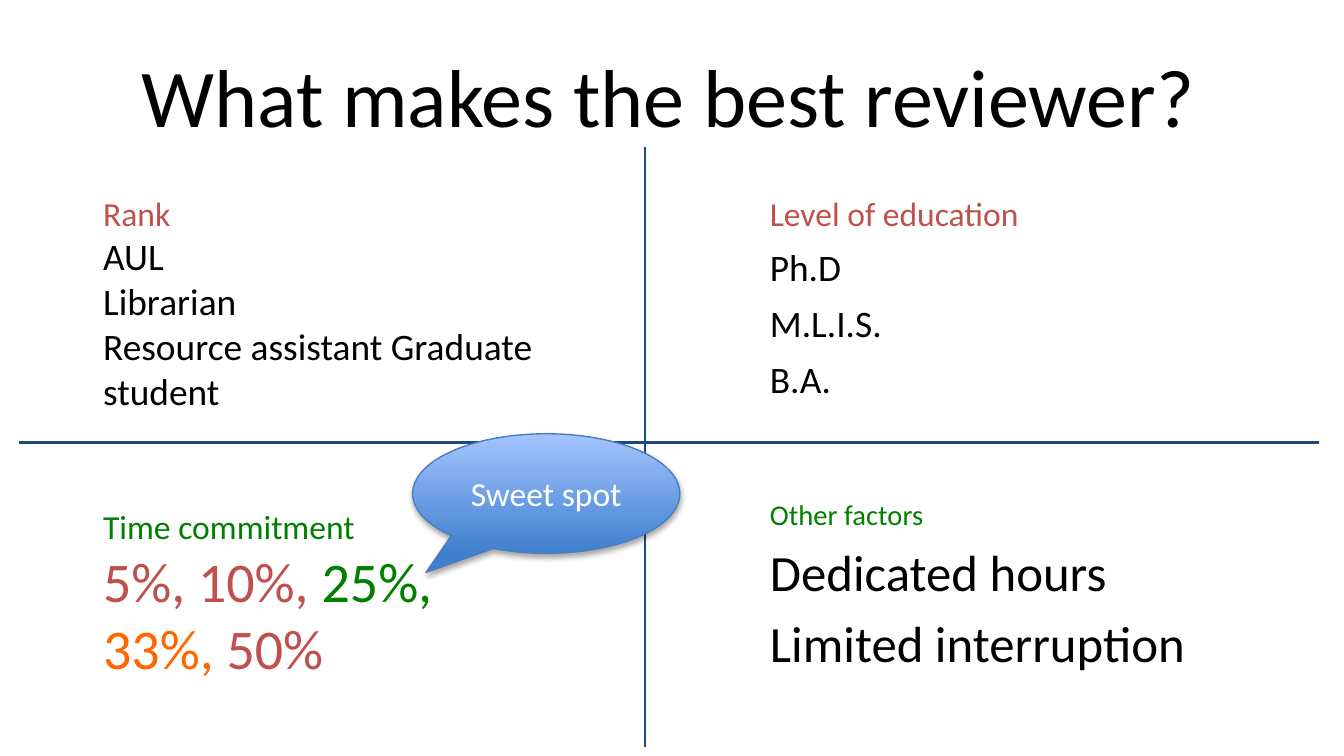
from dataclasses import dataclass

from lxml import etree
from pptx import Presentation
from pptx import util as u
from pptx.dml.color import RGBColor
from pptx.enum import shapes, text
from pptx.oxml import parse_xml
from pptx.oxml.ns import nsdecls, qn
from pptx.shapes.autoshape import Shape
from pptx.slide import Slide
from pptx.text.text import TextFrame


@dataclass(frozen=True)
class Theme:
    font: str = "Calibri"
    black: str = "000000"
    white: str = "FFFFFF"
    red: str = "C0504D"
    green: str = "008000"
    orange: str = "FF6600"
    axis: str = "1F497D"
    callout_dark: str = "3F80CE"
    callout_light: str = "A4C4FF"
    callout_edge: str = "4B7EBC"
    title: float = 44
    heading: float = 18
    item: float = 20
    percentage: float = 30
    small_heading: float = 15.3
    large_item: float = 27.2


THEME = Theme()


@dataclass(frozen=True)
class Box:
    """A rectangle in centimetres."""
    left: float
    top: float
    width: float
    height: float

    def lengths(self) -> tuple[u.Cm, ...]:
        return tuple(u.Cm(side) for side in (self.left, self.top, self.width, self.height))


@dataclass(frozen=True)
class Span:
    text: str
    color: str = THEME.black


@dataclass(frozen=True)
class Line:
    spans: tuple[Span, ...]
    size: float


@dataclass(frozen=True)
class Quadrant:
    box: Box
    lines: list[Line]
    gap: float = 0


def line(words: str, size: float, color: str = THEME.black) -> Line:
    return Line((Span(words, color),), size)


def items(size: float, *words: str) -> list[Line]:
    return [line(word, size) for word in words]


LEFT, RIGHT, TOP = 1.7, 14.3, 3.4
RANK = Quadrant(
    Box(LEFT, TOP, 10.34, 5.18),
    [line("Rank", THEME.heading, THEME.red),
     *items(THEME.item, "AUL", "Librarian", "Resource assistant Graduate student")],
)
EDUCATION = Quadrant(
    Box(RIGHT, TOP, 8.94, 4.5),
    [line("Level of education", THEME.heading, THEME.red),
     *items(THEME.item, "Ph.D", "M.L.I.S.", "B.A.")],
    gap=6,
)
TIME = Quadrant(
    Box(LEFT, 9.32, 8.64, 3.63),
    [line("Time commitment", THEME.heading, THEME.green),
     Line((Span("5%, 10%, ", THEME.red), Span("25%, ", THEME.green),
           Span("33%, ", THEME.orange), Span("50%", THEME.red)), THEME.percentage)],
)
OTHER = Quadrant(
    Box(RIGHT, 9.14, 10.21, 3.38),
    [line("Other factors", THEME.small_heading, THEME.green),
     *items(THEME.large_item, "Dedicated hours", "Limited interruption")],
    gap=5.4,
)


def write(frame: TextFrame, lines: list[Line], gap: float = 0,
          align: text.PP_ALIGN = text.PP_ALIGN.LEFT) -> None:
    """Fill a frame with unbulleted lines, gap points apart."""
    frame.word_wrap = True
    frame.auto_size = text.MSO_AUTO_SIZE.NONE
    frame.margin_left = frame.margin_right = u.Cm(0.25)
    frame.margin_top = frame.margin_bottom = u.Cm(0.25)
    for index, entry in enumerate(lines):
        paragraph = frame.add_paragraph() if index else frame.paragraphs[0]
        properties = paragraph._p.get_or_add_pPr()
        properties.set("marL", "0")
        properties.set("indent", "0")
        etree.SubElement(properties, qn("a:buNone"))
        paragraph.alignment = align
        paragraph.space_before = u.Pt(gap if index else 0)
        for span in entry.spans:
            run = paragraph.add_run()
            run.text = span.text
            run.font.name = THEME.font
            run.font.size = u.Pt(entry.size)
            run.font.color.rgb = RGBColor.from_string(span.color)


def place(shape: Shape, box: Box) -> None:
    shape.left, shape.top, shape.width, shape.height = box.lengths()


def add_title(slide: Slide, words: str) -> None:
    title = slide.shapes.title
    place(title, Box(0.36, 0.58, 24.56, 2.39))
    write(title.text_frame, [line(words, THEME.title)], align=text.PP_ALIGN.CENTER)
    title.text_frame.vertical_anchor = text.MSO_ANCHOR.BOTTOM


def add_quadrant(slide: Slide, quadrant: Quadrant) -> None:
    text_box = slide.shapes.add_textbox(*quadrant.box.lengths())
    write(text_box.text_frame, quadrant.lines, quadrant.gap)


def add_axis(slide: Slide, start: tuple[float, float], end: tuple[float, float]) -> None:
    axis = slide.shapes.add_connector(
        shapes.MSO_CONNECTOR.STRAIGHT, *(u.Cm(value) for value in (*start, *end)))
    axis.line.color.rgb = RGBColor.from_string(THEME.axis)
    axis.line.width = u.Pt(1.5)
    etree.SubElement(axis._element.spPr, qn("a:effectLst"))


def add_callout(slide: Slide, box: Box, words: str) -> None:
    callout = slide.shapes.add_shape(
        shapes.MSO_SHAPE.OVAL_CALLOUT, *box.lengths())
    callout.adjustments[0] = -0.45
    callout.adjustments[1] = 0.66
    callout.fill.gradient()
    callout.fill.gradient_angle = 90
    for stop, color in zip(callout.fill.gradient_stops,
                           (THEME.callout_dark, THEME.callout_light)):
        stop.color.rgb = RGBColor.from_string(color)
    callout.line.color.rgb = RGBColor.from_string(THEME.callout_edge)
    callout.line.width = u.Pt(0.75)
    callout.shadow.inherit = False
    callout._element.spPr.find(qn("a:effectLst")).append(parse_xml(
        f'<a:outerShdw {nsdecls("a")} blurRad="{u.Pt(3.1)}" dist="{u.Pt(1.8)}" '
        f'dir="5400000" rotWithShape="0"><a:srgbClr val="{THEME.black}">'
        '<a:alpha val="35000"/></a:srgbClr></a:outerShdw>'))
    write(callout.text_frame, [line(words, THEME.heading, THEME.white)],
          align=text.PP_ALIGN.CENTER)
    callout.text_frame.vertical_anchor = text.MSO_ANCHOR.MIDDLE


def main() -> None:
    presentation = Presentation()
    presentation.slide_width, presentation.slide_height = u.Cm(25.4), u.Cm(14.29)
    slide = presentation.slides.add_slide(presentation.slide_layouts[1])

    add_title(slide, "What makes the best reviewer?")
    body = slide.placeholders[1]
    place(body, OTHER.box)
    write(body.text_frame, OTHER.lines, OTHER.gap)
    for quadrant in (RANK, EDUCATION, TIME):
        add_quadrant(slide, quadrant)
    add_axis(slide, (12.19, 2.77), (12.19, 14.12))
    add_axis(slide, (0.36, 8.36), (24.92, 8.36))
    add_callout(slide, Box(7.8, 8.2, 5.05, 2.26), "Sweet spot")

    presentation.save("out.pptx")


if __name__ == "__main__":
    main()
